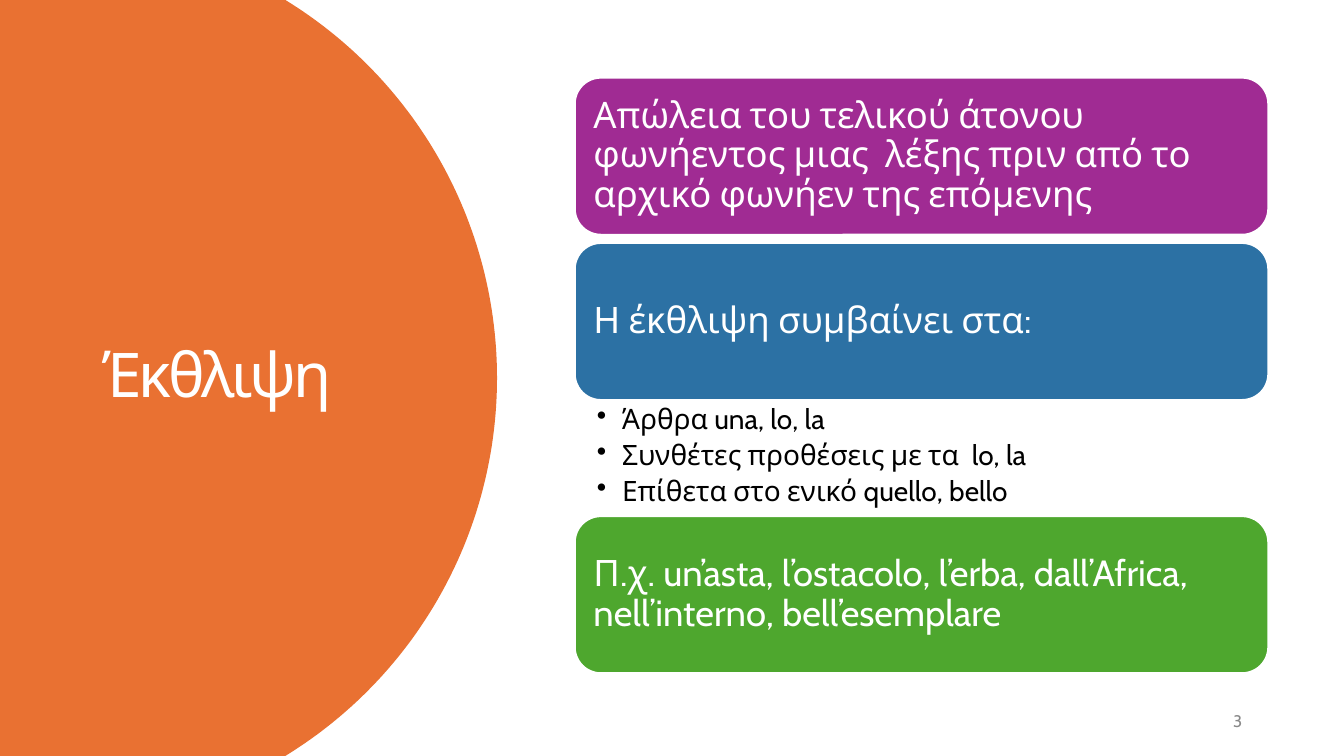
"""Build the slide on Greek-taught Italian elision."""
import math
from dataclasses import dataclass

from lxml import etree
from pptx import Presentation
from pptx.dml.color import RGBColor
from pptx.enum import shapes, text
from pptx.oxml import ns
from pptx.util import Emu, Pt

PX = 9144
FONT = "Cabin"
ORANGE = RGBColor(0xE9, 0x71, 0x32)
PURPLE = RGBColor(0xA0, 0x2B, 0x93)
BLUE = RGBColor(0x2C, 0x71, 0xA4)
GREEN = RGBColor(0x4E, 0xA7, 0x2E)
WHITE = RGBColor(0xFF, 0xFF, 0xFF)
BLACK = RGBColor(0, 0, 0)
GREY = RGBColor(0x89, 0x89, 0x89)

SLIDE_WIDTH, SLIDE_HEIGHT = 1333, 750
CARD_LEFT, CARD_WIDTH, CARD_HEIGHT = 570, 688, 156
DISC_RIGHT, DISC_EDGE = 493, 283
ARC_STEPS = 120


@dataclass(frozen=True)
class Box:
    left: int
    top: int
    width: int
    height: int

    def emu(self) -> list[Emu]:
        return [px(n) for n in (self.left, self.top, self.width, self.height)]


@dataclass(frozen=True)
class Style:
    size: int
    color: RGBColor
    align: text.PP_ALIGN = text.PP_ALIGN.LEFT
    anchor: text.MSO_ANCHOR = text.MSO_ANCHOR.MIDDLE
    line_spacing: float = 0.9
    space_after: int = 0
    tracking: int = 0
    bullet: str = ""
    margins: tuple[int, int, int, int] = (10, 5, 10, 5)


@dataclass(frozen=True)
class Card:
    top: int
    color: RGBColor
    wording: str


TITLE = Style(44, WHITE, tracking=-240)
NUMBER = Style(12, GREY, text.PP_ALIGN.RIGHT, line_spacing=1.0, space_after=6, tracking=-110)
CARD = Style(26, WHITE, space_after=9, margins=(11, 11, 11, 11))
BULLETS = Style(20, BLACK, anchor=text.MSO_ANCHOR.TOP, space_after=4,
                bullet="•", margins=(22, 4, 20, 4))

CARDS = (
    Card(77, PURPLE, "Απώλεια του τελικού άτονου φωνήεντος μιας  λέξης πριν από το "
                     "αρχικό φωνήεν της επόμενης"),
    Card(241, BLUE, "Η έκθλιψη συμβαίνει στα:"),
    Card(512, GREEN, "Π.χ. un’asta, l’ostacolo, l’erba, dall’Africa, "
                     "nell’interno, bell’esemplare"),
)
CASES = (
    "Άρθρα una, lo, la",
    "Συνθέτες προθέσεις με τα  lo, la",
    "Επίθετα στο ενικό quello, bello",
)


def px(length: float) -> Emu:
    """Turn px into EMU."""
    return Emu(round(length * PX))


def add_bullet(paragraph, mark: str) -> None:
    """Give a paragraph a hanging bullet."""
    properties = paragraph._p.get_or_add_pPr()
    properties.set("marL", str(px(25)))
    properties.set("indent", str(-px(25)))
    etree.SubElement(properties, ns.qn("a:buChar")).set("char", mark)


def write(shape, lines: tuple[str, ...], style: Style) -> None:
    """Fill a shape with styled paragraphs."""
    frame = shape.text_frame
    frame.word_wrap = True
    frame.vertical_anchor = style.anchor
    (frame.margin_left, frame.margin_top,
     frame.margin_right, frame.margin_bottom) = map(px, style.margins)
    for index, line in enumerate(lines):
        paragraph = frame.add_paragraph() if index else frame.paragraphs[0]
        paragraph.alignment = style.align
        paragraph.line_spacing = style.line_spacing
        paragraph.space_after = Pt(style.space_after)
        if style.bullet:
            add_bullet(paragraph, style.bullet)
        run = paragraph.add_run()
        run.text = line
        run.font.name = FONT
        run.font.size = Pt(style.size)
        run.font.color.rgb = style.color
        if style.tracking:
            run._r.get_or_add_rPr().set("spc", str(style.tracking))


def add_text(slide, box: Box, lines: tuple[str, ...], style: Style) -> None:
    """Add a text box."""
    write(slide.shapes.add_textbox(*box.emu()), lines, style)


def add_disc(slide) -> None:
    """Add the circle segment that runs off the left edge."""
    half = SLIDE_HEIGHT / 2
    depth = DISC_RIGHT - DISC_EDGE
    radius = (depth ** 2 + half ** 2) / (2 * depth)
    sweep = math.asin(half / radius)
    angles = [sweep * (2 * step / ARC_STEPS - 1) for step in range(ARC_STEPS + 1)]
    arc = [(px(DISC_RIGHT - radius + radius * math.cos(angle)),
            px(half + radius * math.sin(angle))) for angle in angles]
    builder = slide.shapes.build_freeform(0, 0)
    builder.add_line_segments([*arc, (0, px(SLIDE_HEIGHT))], close=True)
    disc = builder.convert_to_shape()
    disc.shadow.inherit = False
    disc.fill.solid()
    disc.fill.fore_color.rgb = ORANGE
    disc.line.fill.background()


def add_card(slide, card: Card) -> None:
    """Add a rounded card with its sentence."""
    box = Box(CARD_LEFT, card.top, CARD_WIDTH, CARD_HEIGHT)
    shape = slide.shapes.add_shape(shapes.MSO_SHAPE.ROUNDED_RECTANGLE, *box.emu())
    shape.shadow.inherit = False
    shape.fill.solid()
    shape.fill.fore_color.rgb = card.color
    shape.line.color.rgb = WHITE
    shape.line.width = Pt(1.5)
    write(shape, (card.wording,), CARD)


def main() -> None:
    """Build and save the presentation."""
    presentation = Presentation()
    presentation.slide_width = px(SLIDE_WIDTH)
    presentation.slide_height = px(SLIDE_HEIGHT)
    slide = presentation.slides.add_slide(presentation.slide_layouts[6])
    add_disc(slide)
    add_text(slide, Box(92, 70, 323, 609), ("Έκθλιψη",), TITLE)
    add_text(slide, Box(942, 695, 300, 40), ("3",), NUMBER)
    for card in CARDS:
        add_card(slide, card)
    add_text(slide, Box(CARD_LEFT, 398, CARD_WIDTH, 115), CASES, BULLETS)
    presentation.save("out.pptx")


if __name__ == "__main__":
    main()
